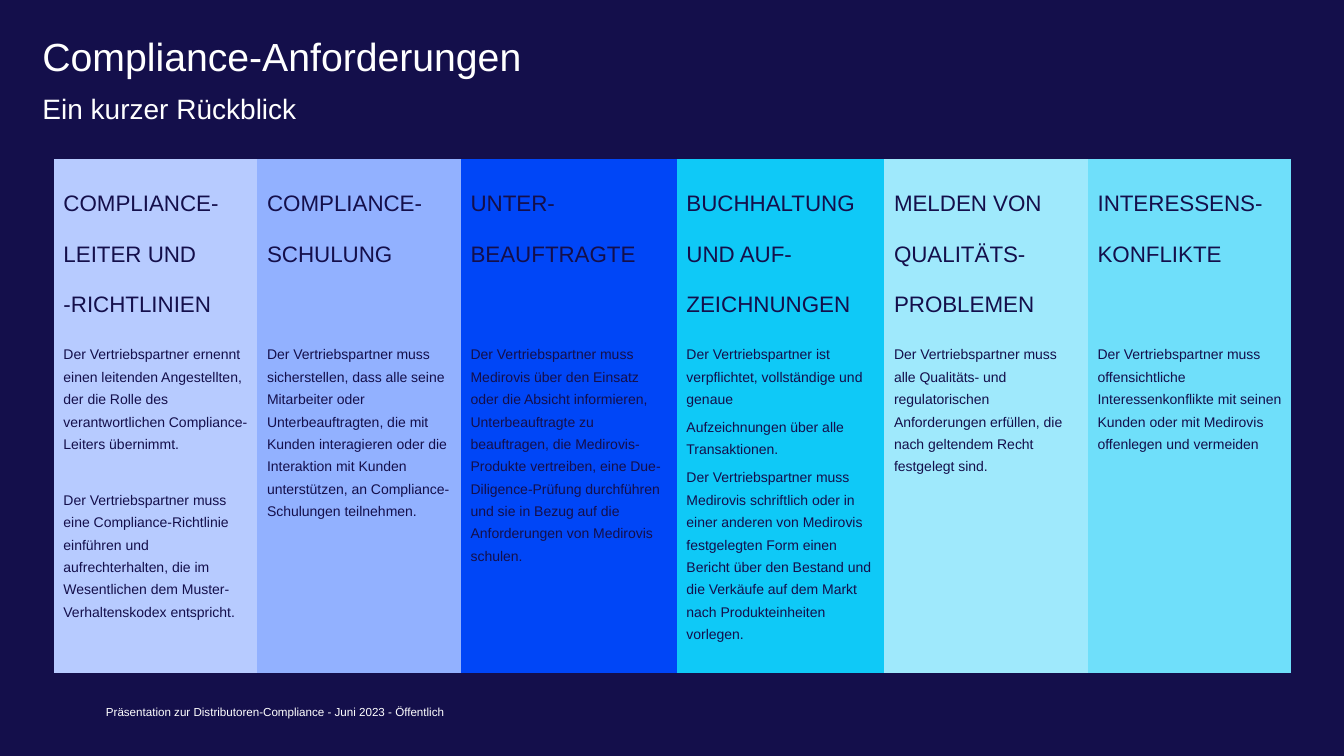
from dataclasses import dataclass

from pptx import Presentation
from pptx.dml.color import RGBColor
from pptx.enum.text import MSO_ANCHOR, MSO_AUTO_SIZE, PP_ALIGN
from pptx.oxml.ns import qn
from pptx.util import Cm, Pt

NAVY, WHITE = "140F4B", "FFFFFF"
PLAIN = "{2D5ABB26-0587-4C30-8999-92F81FD0307C}"


@dataclass
class Topic:
    """One column of the table."""
    head: str
    fill: str
    width: float
    body: list[str]
    gap: float = 0


TOPICS = [
    Topic("COMPLIANCE-LEITER UND -RICHTLINIEN", "B7CBFF", 5.13, [
        "Der Vertriebspartner ernennt einen leitenden Angestellten, der die "
        "Rolle des verantwortlichen Compliance-Leiters übernimmt.",
        "Der Vertriebspartner muss eine Compliance-Richtlinie einführen und "
        "aufrechterhalten, die im Wesentlichen dem Muster-Verhaltenskodex "
        "entspricht."], gap=20),
    Topic("COMPLIANCE-SCHULUNG", "92B1FF", 5.13, [
        "Der Vertriebspartner muss sicherstellen, dass alle seine Mitarbeiter "
        "oder Unterbeauftragten, die mit Kunden interagieren oder die "
        "Interaktion mit Kunden unterstützen, an Compliance-Schulungen "
        "teilnehmen."]),
    Topic("UNTER-BEAUFTRAGTE", "0046F7", 5.44, [
        "Der Vertriebspartner muss Medirovis über den Einsatz oder die Absicht "
        "informieren, Unterbeauftragte zu beauftragen, die Medirovis-Produkte "
        "vertreiben, eine Due-Diligence-Prüfung durchführen und sie in Bezug "
        "auf die Anforderungen von Medirovis schulen."]),
    Topic("BUCHHALTUNG UND AUF-ZEICHNUNGEN", "0FC9F7", 5.23, [
        "Der Vertriebspartner ist verpflichtet, vollständige und genaue",
        "Aufzeichnungen über alle Transaktionen.",
        "Der Vertriebspartner muss Medirovis schriftlich oder in einer anderen "
        "von Medirovis festgelegten Form einen Bericht über den Bestand und "
        "die Verkäufe auf dem Markt nach Produkteinheiten vorlegen."]),
    Topic("MELDEN VON QUALITÄTS-PROBLEMEN", "9FE9FC", 5.13, [
        "Der Vertriebspartner muss alle Qualitäts- und regulatorischen "
        "Anforderungen erfüllen, die nach geltendem Recht festgelegt sind."]),
    Topic("INTERESSENS-KONFLIKTE", "6FDFFA", 5.13, [
        "Der Vertriebspartner muss offensichtliche Interessenkonflikte mit "
        "seinen Kunden oder mit Medirovis offenlegen und vermeiden"]),
]


def paint(fill, tint: str) -> None:
    """Give a fill one solid colour."""
    fill.solid()
    fill.fore_color.rgb = RGBColor.from_string(tint)


def write(para, text: str, size: float, tint: str) -> None:
    """Add one left-aligned run to a paragraph."""
    para.alignment = PP_ALIGN.LEFT
    run = para.add_run()
    run.text = text
    run.font.name, run.font.size, run.font.bold = "Arial", Pt(size), False
    paint(run.font.fill, tint)


def label(shape, box: tuple, text: str, size: float, anchor) -> None:
    """Place a shape and write its single line."""
    shape.left, shape.top, shape.width, shape.height = map(Cm, box)
    frame = shape.text_frame
    frame.word_wrap, frame.auto_size = True, MSO_AUTO_SIZE.NONE
    frame.vertical_anchor = anchor
    frame.margin_left = frame.margin_right = Cm(0)
    frame.margin_top = frame.margin_bottom = Cm(0)
    para = frame.paragraphs[0]
    para.space_before = Pt(0)
    write(para, text, size, WHITE)


def fill_cell(cell, texts: list[str], tint: str, size: float, line: float,
              after: float, gap: float, foot: float) -> None:
    """Colour a table cell and write its paragraphs."""
    paint(cell.fill, tint)
    cell.margin_left = cell.margin_right = Cm(0.25)
    cell.margin_top, cell.margin_bottom = Cm(0.18), Cm(foot)
    frame = cell.text_frame
    for i, text in enumerate(texts):
        para = frame.add_paragraph() if i else frame.paragraphs[0]
        para.line_spacing, para.space_after = Pt(line), Pt(after)
        para.space_before = Pt(gap if i else 0)
        write(para, text, size, NAVY)


def add_topics(slide) -> None:
    """Draw the table of topics."""
    total = sum(topic.width for topic in TOPICS)
    table = slide.shapes.add_table(2, len(TOPICS), Cm(1.35), Cm(4.01),
                                   Cm(total), Cm(12.95)).table
    table.first_row = table.horz_banding = False
    table._tbl.tblPr.find(qn("a:tableStyleId")).text = PLAIN
    table.rows[0].height, table.rows[1].height = Cm(4.39), Cm(8.56)
    for i, topic in enumerate(TOPICS):
        table.columns[i].width = Cm(topic.width)
        fill_cell(table.cell(0, i), [topic.head], topic.fill,
                  16, 36, 0, 0, 0.18)
        fill_cell(table.cell(1, i), topic.body, topic.fill,
                  10, 16, 4, topic.gap, 0.08)


def main() -> None:
    """Build and save the slide."""
    deck = Presentation()
    deck.slide_width, deck.slide_height = Cm(33.87), Cm(19.05)
    slide = deck.slides.add_slide(deck.slide_layouts[0])
    paint(slide.background.fill, NAVY)
    title, sub = slide.shapes.title, slide.placeholders[1]
    label(title, (1.07, 0.97, 31.75, 1.07), "Compliance-Anforderungen",
          28, MSO_ANCHOR.MIDDLE)
    title.text_frame.paragraphs[0].line_spacing = 0.85
    label(sub, (1.07, 2.21, 30.96, 1.02), "Ein kurzer Rückblick",
          20, MSO_ANCHOR.MIDDLE)
    add_topics(slide)
    foot = slide.shapes.add_textbox(0, 0, 0, 0)
    label(foot, (2.67, 17.75, 24.36, 0.36),
          "Präsentation zur Distributoren-Compliance - Juni 2023 - Öffentlich",
          8.3, MSO_ANCHOR.BOTTOM)
    deck.save("out.pptx")


if __name__ == "__main__":
    main()
